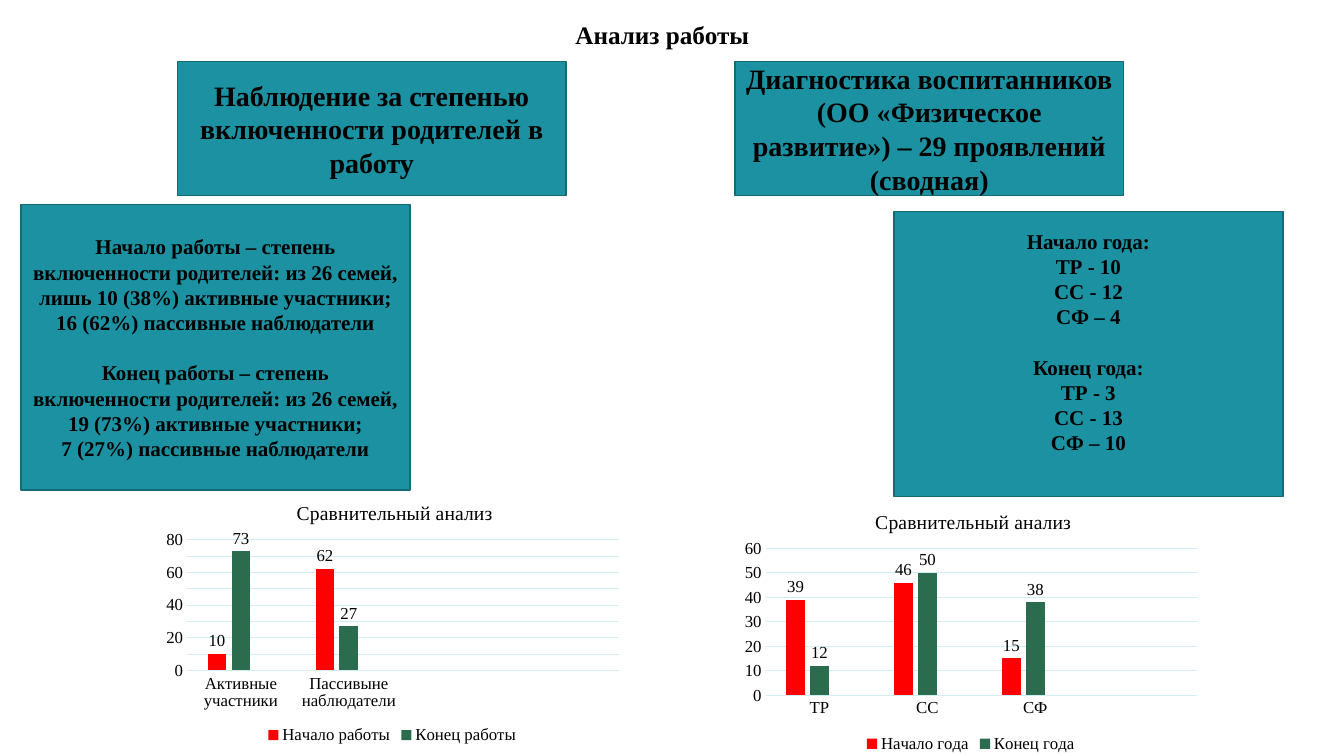
from lxml import etree
from pptx import Presentation
from pptx.chart.data import CategoryChartData
from pptx.dml.color import RGBColor
from pptx.enum.chart import XL_CHART_TYPE as Kind, XL_LABEL_POSITION as Spot
from pptx.enum.chart import XL_LEGEND_POSITION as Side, XL_TICK_MARK as Tick
from pptx.enum.shapes import MSO_SHAPE as Form
from pptx.enum.text import MSO_ANCHOR as Anchor, MSO_AUTO_SIZE as Fit, PP_ALIGN as Align
from pptx.util import Cm, Pt

rgb = RGBColor.from_string
NS = "http://schemas.openxmlformats.org/drawingml/2006/chart"


def style(font, size, bold=False):
    font.name, font.size, font.bold = "Times New Roman", Pt(size), bold
    font.color.rgb = rgb("000000")


def place(node, index, **marks):
    """Give a chart part a manual layout, as fractions of the chart."""
    for old in node.findall(f"{{{NS}}}layout"):
        node.remove(old)
    layout = etree.Element(f"{{{NS}}}layout")
    manual = etree.SubElement(layout, f"{{{NS}}}manualLayout")
    for tag, val in marks.items():
        etree.SubElement(manual, f"{{{NS}}}{tag}", val=str(val))
    node.insert(index, layout)


deck = Presentation()
deck.slide_width, deck.slide_height = Cm(33.87), Cm(19.05)
slide = deck.slides.add_slide(deck.slide_layouts[6])

# Heading
head = slide.shapes.add_textbox(Cm(14.25), Cm(0.46), Cm(4.93), Cm(0.94)).text_frame
head.text = "Анализ работы"
head.word_wrap, head.auto_size = False, Fit.SHAPE_TO_FIT_TEXT
head.paragraphs[0].line_spacing = 0.9
style(head.paragraphs[0].font, 18, True)

# Boxes: left, top, height, text size, bottom inset, paragraphs
boxes = [
    (4.47, 1.55, 3.38, 20, 0.13,
     ["Наблюдение за степенью включенности родителей в работу"]),
    (0.53, 5.16, 7.19, 15, 0.13,
     ["Начало работы – степень включенности родителей: из 26 семей, лишь 10 (38%) "
      "активные участники; 16 (62%) пассивные наблюдатели",
      "Конец работы – степень включенности родителей: из 26 семей, 19 (73%) "
      "активные участники;",
      "7 (27%) пассивные наблюдатели"]),
    (18.52, 1.55, 3.38, 20, 0.13,
     ["Диагностика воспитанников (ОО «Физическое развитие») – 29 проявлений (сводная)"]),
    (22.53, 5.33, 7.19, 15, 0.76,
     ["Начало года:", "ТР - 10", "СС - 12", "СФ – 4",
      "Конец года:", "ТР - 3", "СС - 13", "СФ – 10"]),
]
for left, top, high, size, inset, lines in boxes:
    box = slide.shapes.add_shape(Form.RECTANGLE, Cm(left), Cm(top), Cm(9.8), Cm(high))
    box.shadow.inherit = False
    box.fill.solid()
    box.fill.fore_color.rgb = rgb("1B91A1")
    box.line.color.rgb = rgb("146B77")
    box.line.width = Pt(1)
    frame = box.text_frame
    frame.text = "\n".join(lines)
    frame.word_wrap, frame.vertical_anchor = True, Anchor.MIDDLE
    frame.margin_bottom = Cm(inset)
    for para in frame.paragraphs:
        para.alignment = Align.CENTER
        style(para.font, size, True)
        if para.text.startswith("Конец"):
            para.space_before = Pt(18)

# Charts: left, top, axis maximum, plot height, categories, series
charts = [
    (3.94, 12.12, 80, 0.49, ["Активные участники", "Пассивыне наблюдатели", "", ""],
     {"Начало работы": [10, 62], "Конец работы": [73, 27]}),
    (18.52, 12.34, 60, 0.55, ["ТР", "СС", "СФ", ""],
     {"Начало года": [39, 46, 15], "Конец года": [12, 50, 38]}),
]
for left, top, peak, high, cats, rows in charts:
    data = CategoryChartData()
    data.categories = cats
    for name, vals in {**rows, "Series 3": []}.items():
        data.add_series(name, vals + [None] * (4 - len(vals)))
    chart = slide.shapes.add_chart(
        Kind.COLUMN_CLUSTERED, Cm(left), Cm(top), Cm(11.89), Cm(6.73), data).chart
    style(chart.font, 12)

    title = chart.chart_title
    title.text_frame.text = "Сравнительный анализ"
    style(title.text_frame.paragraphs[0].runs[0].font, 14)
    place(title._element, 1, xMode="edge", yMode="edge", x=0.29, y=0.06)
    place(chart._chartSpace.chart.plotArea, 0, layoutTarget="inner",
          xMode="edge", yMode="edge", x=0.065, y=0.22, w=0.915, h=high)

    plot = chart.plots[0]
    plot.gap_width, plot.overlap, plot.vary_by_categories = 219, -27, False
    for bar, color in zip(plot.series, ["FF0000", "2A6C4D", "37AFD5"]):
        bar.format.fill.solid()
        bar.format.fill.fore_color.rgb = rgb(color)
    for bar in list(plot.series)[:2]:
        tags = bar.data_labels
        tags.show_value, tags.position = True, Spot.OUTSIDE_END
        style(tags.font, 12)

    floor, scale = chart.category_axis, chart.value_axis
    for axis in (floor, scale):
        axis.major_tick_mark = axis.minor_tick_mark = Tick.NONE
        style(axis.tick_labels.font, 12)
    scale.minimum_scale, scale.maximum_scale, scale.major_unit = 0, peak, 10
    scale.format.line.fill.background()
    for line in (floor.format.line, scale.major_gridlines.format.line):
        line.color.rgb = rgb("CFEFF2")
        line.width = Pt(0.75)

    chart.has_legend = True
    legend = chart.legend
    legend.position, legend.include_in_layout = Side.BOTTOM, False
    style(legend.font, 12)
    # The spare series keeps the bar spacing but has no legend entry
    entry = etree.Element(f"{{{NS}}}legendEntry")
    etree.SubElement(entry, f"{{{NS}}}idx", val="2")
    etree.SubElement(entry, f"{{{NS}}}delete", val="1")
    legend._element.insert(1, entry)

deck.save("out.pptx")
